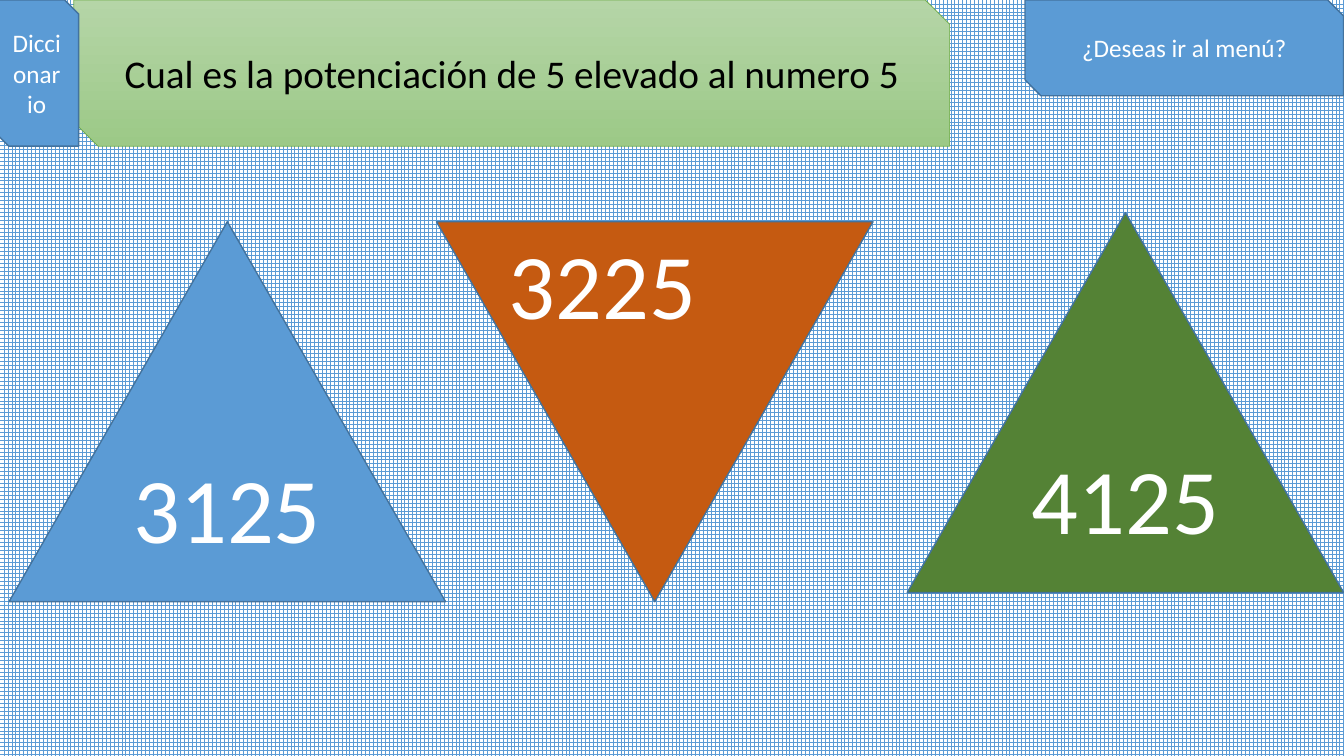
from pptx import Presentation
from pptx.dml.color import RGBColor
from pptx.enum.dml import MSO_PATTERN as Pattern
from pptx.enum.shapes import MSO_SHAPE as Shape
from pptx.enum.text import MSO_ANCHOR as Anchor, MSO_AUTO_SIZE as AutoSize, PP_ALIGN as Align
from pptx.util import Pt

BLUE = "5B9BD5"
OUTLINE = "43739E"
WHITE = "FFFFFF"
TRIANGLE_SIZE = (311.8, 271.4)


def color(hex_text):
    return RGBColor.from_string(hex_text)


def set_background(page):
    fill = page.background.fill
    fill.patterned()
    fill.pattern = Pattern.LARGE_GRID
    fill.fore_color.rgb = color(BLUE)
    fill.back_color.rgb = color(WHITE)


def write(frame, text, size, font_color, align):
    frame.word_wrap = True
    para = frame.paragraphs[0]
    para.text = text
    para.alignment = align
    para.font.name = "Calibri"
    para.font.size = Pt(size)
    para.font.color.rgb = color(font_color)


def add_box(page, kind, place, fill, text="", size=18, font_color=WHITE):
    box = page.shapes.add_shape(kind, *map(Pt, place))
    box.shadow.inherit = False
    box.fill.solid()
    box.fill.fore_color.rgb = color(fill)
    box.line.color.rgb = color(OUTLINE)
    box.line.width = Pt(1)
    if text:
        box.text_frame.vertical_anchor = Anchor.MIDDLE
        write(box.text_frame, text, size, font_color, Align.CENTER)
    return box


def add_tab(page, place, text, **style):
    return add_box(page, Shape.SNIP_2_DIAG_RECTANGLE, place, BLUE, text, **style)


def add_triangle(page, left, top, fill, text=""):
    place = (left, top, *TRIANGLE_SIZE)
    return add_box(page, Shape.ISOSCELES_TRIANGLE, place, fill, text, size=66)


def add_question(page):
    box = add_tab(page, (52.6, 0, 625.7, 104.4),
                  "Cual es la potenciación de 5 elevado al numero 5",
                  size=28, font_color="000000")
    box.fill.gradient()
    box.fill.gradient_angle = 270
    for stop, shade in zip(box.fill.gradient_stops, ("B5D5A7", "9CC987")):
        stop.color.rgb = color(shade)
    box.line.color.rgb = color("70AD47")
    box.line.width = Pt(0.5)


def add_label(page, place, text):
    box = page.shapes.add_textbox(*map(Pt, place))
    write(box.text_frame, text, 66, WHITE, Align.LEFT)
    box.text_frame.auto_size = AutoSize.SHAPE_TO_FIT_TEXT


def main():
    deck = Presentation()
    deck.slide_width, deck.slide_height = Pt(960), Pt(540)
    page = deck.slides.add_slide(deck.slide_layouts[6])
    set_background(page)
    add_question(page)
    add_triangle(page, 6.5, 158.4, BLUE, "3125")
    add_triangle(page, 311.8, 158.4, "C55A11").rotation = 180
    add_label(page, (356.4, 158.4, 222.5, 87.1), "3225")
    add_triangle(page, 648, 151.9, "548235", "4125")
    add_tab(page, (732.2, 0, 227.5, 68.4), "¿Deseas ir al menú?")
    add_tab(page, (-3.6, 0, 59.8, 104.4), "Diccionario")
    deck.save("out.pptx")


if __name__ == "__main__":
    main()
